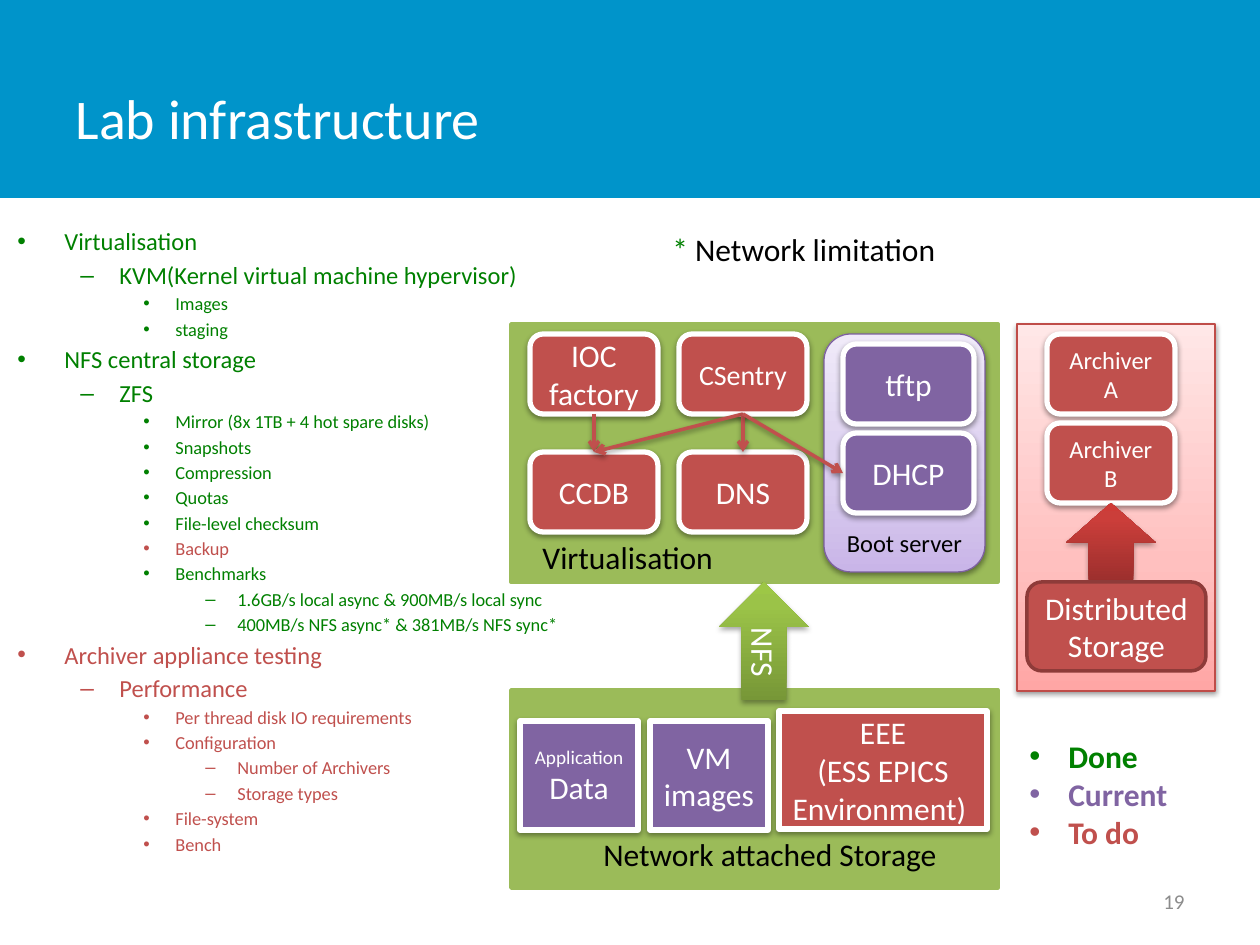
from copy import deepcopy

from lxml.etree import SubElement
from pptx import Presentation
from pptx.dml.color import RGBColor
from pptx.enum.shapes import MSO_CONNECTOR as CONNECTOR, MSO_SHAPE as SHAPE
from pptx.enum.text import MSO_ANCHOR as ANCHOR, PP_ALIGN as ALIGN
from pptx.oxml.ns import qn
from pptx.util import Emu, Pt

PX = 914400 / 126
FONT = "Calibri"
WHITE, BLACK, GREY, BLUE = "FFFFFF", "000000", "8C8C8C", "0094CA"
DONE, CURRENT, TODO, GREEN = "008000", "8064A2", "C0504D", "9BBB59"
PINK_FADE = [(0, "FFA6A5"), (0.35, "FFC0BF"), (1, "FFE7E7")]
LILAC_FADE = [(0, "C9B5E8"), (0.35, "D8CBEE"), (1, "F0EAF9")]
GREEN_FADE = [(0, "779737"), (0.8, "9BC348"), (1, "9DC746")]
RED_FADE = [(0, "9C2F2D"), (0.8, "CB3E3A"), (1, "CE3B37")]
SOFT, DEEP = (20000, 38000), (23000, 35000)

TITLE = "Lab infrastructure"
OUTLINE = [
    (0, "Virtualisation", DONE),
    (1, "KVM(Kernel virtual machine hypervisor)", DONE),
    (2, "Images", DONE),
    (2, "staging", DONE),
    (0, "NFS central storage", DONE),
    (1, "ZFS", DONE),
    (2, "Mirror (8x 1TB + 4 hot spare disks)", DONE),
    (2, "Snapshots", DONE),
    (2, "Compression", DONE),
    (2, "Quotas", DONE),
    (2, "File-level checksum", DONE),
    (2, "Backup", TODO),
    (2, "Benchmarks", DONE),
    (3, "1.6GB/s local async & 900MB/s local sync", DONE),
    (3, "400MB/s NFS async* & 381MB/s NFS sync*", DONE),
    (0, "Archiver appliance testing", TODO),
    (1, "Performance", TODO),
    (2, "Per thread disk IO requirements", TODO),
    (2, "Configuration", TODO),
    (3, "Number of Archivers", TODO),
    (3, "Storage types", TODO),
    (2, "File-system", TODO),
    (2, "Bench", TODO),
]
LEVELS = [("•", 47, 47, 14, 2.4), ("–", 102, 39, 14, 2.4),
          ("•", 158, 32, 10.5, 1.9), ("–", 220, 32, 10.5, 1.9)]
LEGEND = [("Done", DONE), ("Current", CURRENT), ("To do", TODO)]

PANELS = [
    ((0, 0, 1260, 198), BLUE, None, None),
    ((1017, 324, 198, 367), PINK_FADE, ("BF4C48", 0.75), SOFT),
    ((511, 690, 487, 198), GREEN, (GREEN, 2), None),
    ((511, 324, 487, 258), GREEN, (GREEN, 2), None),
]
LEFT, MIDDLE, RIGHT, ARCHIVE = 530, 679, 843, 1047
UPPER, LOWER = 334, 452
SERVICES = [
    ("IOC factory", LEFT, UPPER, 128, TODO, 18),
    ("CSentry", MIDDLE, UPPER, 128, TODO, 16),
    ("CCDB", LEFT, LOWER, 128, TODO, 18),
    ("DNS", MIDDLE, LOWER, 128, TODO, 18),
    ("tftp", RIGHT, 344, 131, CURRENT, 18),
    ("DHCP", RIGHT, 433, 131, CURRENT, 18),
    ("Archiver\nA", ARCHIVE, UPPER, 128, TODO, 14),
    ("Archiver\nB", ARCHIVE, 423, 128, TODO, 14),
]
STORES = [
    ((779, 711, 208, 118), TODO, [("EEE", 18), ("(ESS EPICS Environment) ", 18)]),
    ((650, 721, 118, 109), CURRENT, [("VM", 18), ("images", 18)]),
    ((520, 721, 118, 109), CURRENT, [("Application", 11), ("Data", 18)]),
]
TOP, SIDE, BOTTOM = 0, 1, 2
LINKS = [
    ("IOC factory", "CCDB", TOP),
    ("CSentry", "CCDB", TOP),
    ("CSentry", "DNS", TOP),
    ("CSentry", "DHCP", SIDE),
]
LABELS = [
    ((591, 829, 364, 51), [("Network attached Storage", BLACK)]),
    ((530, 532, 198, 51), [("Virtualisation", BLACK)]),
    ((660, 224, 292, 51), [("* ", DONE), ("Network limitation", BLACK)]),
]


def px(value):
    return Emu(round(value * PX))


def color(value):
    return RGBColor.from_string(value)


def add_run(paragraph, text, size, ink, bold=False):
    run = paragraph.add_run()
    run.text = text
    for name, value in {"name": FONT, "size": Pt(size), "bold": bold}.items():
        setattr(run.font, name, value)
    run.font.color.rgb = color(ink)


def paragraphs(frame, items):
    for index, item in enumerate(items):
        yield index, frame.add_paragraph() if index else frame.paragraphs[0], item


def add_bullet(paragraph, mark, margin, hanging):
    properties = paragraph._p.get_or_add_pPr()
    properties.set("marL", str(px(margin)))
    properties.set("indent", str(-px(hanging)))
    SubElement(properties, qn("a:buFont"), typeface="Arial")
    SubElement(properties, qn("a:buChar"), char=mark)


def set_shadow(shape, shadow):
    effects = SubElement(shape._element.spPr, qn("a:effectLst"))
    if shadow:
        distance, alpha = shadow
        outer = SubElement(effects, qn("a:outerShdw"), blurRad="40000",
                           dist=str(distance), dir="5400000", rotWithShape="0")
        ink = SubElement(outer, qn("a:srgbClr"), val=BLACK)
        SubElement(ink, qn("a:alpha"), val=str(alpha))


def set_fill(shape, fill):
    if isinstance(fill, str):
        shape.fill.solid()
        shape.fill.fore_color.rgb = color(fill)
        return
    shape.fill.gradient()
    shape.fill.gradient_angle = 90
    stops = shape._element.spPr.find(".//" + qn("a:gsLst"))
    stops.append(deepcopy(stops[0]))
    for stop, (position, tone) in zip(shape.fill.gradient_stops, fill):
        stop.position = position
        stop.color.rgb = color(tone)


def add_box(slide, kind, box, fill, line=None, shadow=SOFT, lines=(), ink=WHITE, anchor=ANCHOR.MIDDLE):
    shape = slide.shapes.add_shape(kind, *map(px, box))
    set_fill(shape, fill)
    if line:
        shape.line.color.rgb = color(line[0])
        shape.line.width = Pt(line[1])
    else:
        shape.line.fill.background()
    set_shadow(shape, shadow)
    shape.text_frame.vertical_anchor = anchor
    for _, paragraph, (text, size) in paragraphs(shape.text_frame, lines):
        paragraph.alignment = ALIGN.CENTER
        add_run(paragraph, text, size, ink)
    return shape


def add_text(slide, box, wrap=False):
    frame = slide.shapes.add_textbox(*map(px, box)).text_frame
    frame.word_wrap = wrap
    return frame


def add_link(slide, start, end, site):
    connector = slide.shapes.add_connector(CONNECTOR.STRAIGHT, 0, 0, 0, 0)
    connector.begin_connect(start, BOTTOM)
    connector.end_connect(end, site)
    connector.line.color.rgb = color(TODO)
    connector.line.width = Pt(2)
    SubElement(connector.line._get_or_add_ln(), qn("a:tailEnd"), type="arrow")
    set_shadow(connector, SOFT)


def main():
    presentation = Presentation()
    presentation.slide_width, presentation.slide_height = px(1260), px(945)
    slide = presentation.slides.add_slide(presentation.slide_layouts[5])

    for box, fill, line, shadow in PANELS:
        add_box(slide, SHAPE.RECTANGLE, box, fill, line, shadow)

    title = slide.shapes.title
    slide.shapes._spTree.append(title._element)
    for name, value in zip(("left", "top", "width", "height"), (63, 38, 984, 158)):
        setattr(title, name, px(value))
    title.text_frame.vertical_anchor = ANCHOR.MIDDLE
    heading = title.text_frame.paragraphs[0]
    heading.alignment = ALIGN.LEFT
    add_run(heading, TITLE, 32, WHITE)

    outline = add_text(slide, (5, 220, 576, 725), wrap=True)
    for index, paragraph, (level, text, ink) in paragraphs(outline, OUTLINE):
        mark, margin, hanging, size, space = LEVELS[level]
        paragraph.level = level
        paragraph.space_before = Pt(space if index else 0)
        add_bullet(paragraph, mark, margin, hanging)
        add_run(paragraph, text, size, ink)

    for box, fill, lines in STORES:
        add_box(slide, SHAPE.RECTANGLE, box, fill, (WHITE, 3), lines=lines)
    nfs = add_box(slide, SHAPE.UP_ARROW, (719, 582, 90, 118), GREEN_FADE, shadow=DEEP, lines=[("NFS", 18)])
    nfs.text_frame._txBody.bodyPr.set("vert", "vert")
    add_box(slide, SHAPE.ROUNDED_RECTANGLE, (824, 334, 161, 238), LILAC_FADE, ("7D60A0", 0.75),
            lines=[("Boot server", 14)], ink=BLACK, anchor=ANCHOR.BOTTOM)

    services = {}
    for text, left, top, width, fill, size in SERVICES:
        lines = [(line, size) for line in text.split("\n")]
        services[text] = add_box(slide, SHAPE.ROUNDED_RECTANGLE, (left, top, width, 80),
                                 fill, (WHITE, 3), lines=lines)
    for start, end, site in LINKS:
        add_link(slide, services[start], services[end], site)

    add_box(slide, SHAPE.UP_ARROW, (1066, 503, 90, 79), RED_FADE, shadow=DEEP)
    add_box(slide, SHAPE.ROUNDED_RECTANGLE, (1027, 582, 179, 89), TODO, ("8E3B39", 2), None,
            [("Distributed", 18), ("Storage", 18)])

    for box, runs in LABELS:
        paragraph = add_text(slide, box).paragraphs[0]
        for text, ink in runs:
            add_run(paragraph, text, 18, ink)
    for _, paragraph, (text, ink) in paragraphs(add_text(slide, (1017, 731, 164, 127)), LEGEND):
        add_bullet(paragraph, "•", 39, 39)
        add_run(paragraph, text, 18, ink, bold=True)

    number = add_text(slide, (903, 876, 294, 50), wrap=True)
    number.vertical_anchor = ANCHOR.MIDDLE
    number.paragraphs[0].alignment = ALIGN.RIGHT
    add_run(number.paragraphs[0], "19", 12, GREY)

    presentation.save("out.pptx")


if __name__ == "__main__":
    main()
